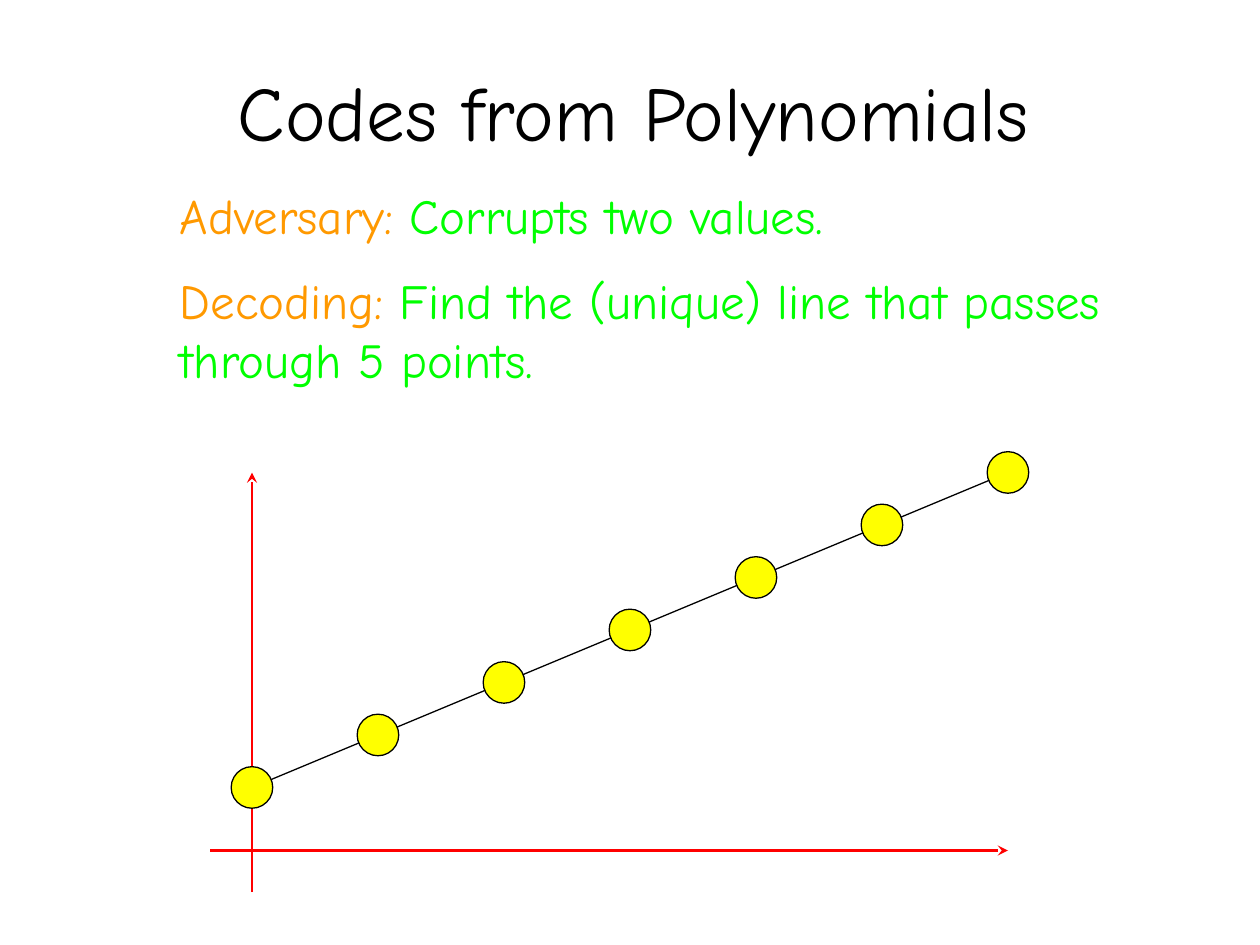
"""Build the slide on codes from polynomials."""
from dataclasses import dataclass

from lxml import etree
from pptx import Presentation
from pptx.dml.color import RGBColor
from pptx.enum.shapes import MSO_CONNECTOR, MSO_SHAPE
from pptx.enum.text import MSO_ANCHOR, MSO_AUTO_SIZE, PP_ALIGN
from pptx.oxml.ns import qn
from pptx.slide import Slide
from pptx.text.text import TextFrame, _Paragraph
from pptx.util import Inches, Pt

STRAIGHT = MSO_CONNECTOR.STRAIGHT
OVAL = MSO_SHAPE.OVAL
MIDDLE = MSO_ANCHOR.MIDDLE
GROW = MSO_AUTO_SIZE.SHAPE_TO_FIT_TEXT
CENTER = PP_ALIGN.CENTER

FONT = "Comic Neue"
BLACK, RED, YELLOW = "000000", "FF0000", "FFFF00"
ORANGE, GREEN = "FF9900", "00FF00"

DOT_SIZE = 0.33
DOT_COUNT = 7
LEFT, RIGHT = 2, 8
LOW, HIGH = 6.25, 3.75


@dataclass
class Line:
    x1: float
    y1: float
    x2: float
    y2: float
    color: str
    width: float
    arrow: bool


@dataclass
class Statement:
    label: str
    body: str


LINES = [
    Line(LEFT, LOW, RIGHT, HIGH, BLACK, 0.75, False),
    Line(LEFT, 7.08, LEFT, HIGH, RED, 1.5, True),
    Line(1.67, 6.75, RIGHT, 6.75, RED, 1.5, True),
]
STATEMENTS = [
    Statement("Adversary: ", "Corrupts two values."),
    Statement("Decoding: ", "Find the (unique) line that passes through 5 points."),
]


def rgb(color: str) -> RGBColor:
    return RGBColor.from_string(color)


def add_line(s: Slide, line: Line) -> None:
    cxn = s.shapes.add_connector(
        STRAIGHT, Inches(line.x1), Inches(line.y1), Inches(line.x2), Inches(line.y2)
    )
    cxn.line.color.rgb = rgb(line.color)
    cxn.line.width = Pt(line.width)
    sp_pr = cxn._element.spPr
    if line.arrow:
        etree.SubElement(sp_pr.find(qn("a:ln")), qn("a:tailEnd"), type="stealth")
    etree.SubElement(sp_pr, qn("a:effectLst"))


def add_dot(s: Slide, x: float, y: float) -> None:
    sp = s.shapes.add_shape(
        OVAL,
        Inches(x - DOT_SIZE / 2),
        Inches(y - DOT_SIZE / 2),
        Inches(DOT_SIZE),
        Inches(DOT_SIZE),
    )
    sp.shadow.inherit = False
    sp.fill.solid()
    sp.fill.fore_color.rgb = rgb(YELLOW)
    sp.line.color.rgb = rgb(BLACK)
    sp.line.width = Pt(0.75)


def add_text_box(s: Slide, x: float, y: float, w: float, h: float) -> TextFrame:
    tf = s.shapes.add_textbox(Inches(x), Inches(y), Inches(w), Inches(h)).text_frame
    tf.word_wrap = True
    return tf


def add_run(p: _Paragraph, text: str, size: float, color: str) -> None:
    r = p.add_run()
    r.text = text
    r.font.name = FONT
    r.font.size = Pt(size)
    r.font.color.rgb = rgb(color)


def add_title(s: Slide) -> None:
    tf = add_text_box(s, 0.53, 0.25, 9, 1.25)
    tf.vertical_anchor = MIDDLE
    p = tf.paragraphs[0]
    p.alignment = CENTER
    add_run(p, "Codes from Polynomials", 44, BLACK)


def add_statements(s: Slide) -> None:
    tf = add_text_box(s, 1.33, 1.42, 8.08, 2)
    tf.auto_size = GROW
    for i, statement in enumerate(STATEMENTS):
        p = tf.add_paragraph() if i else tf.paragraphs[0]
        p.space_after = Pt(15)
        add_run(p, statement.label, 28, ORANGE)
        add_run(p, statement.body, 28, GREEN)


def main() -> None:
    prs = Presentation()
    prs.slide_width, prs.slide_height = Inches(10), Inches(7.5)
    s = prs.slides.add_slide(prs.slide_layouts[6])
    add_title(s)
    for line in LINES:
        add_line(s, line)
    for i in range(DOT_COUNT):
        t = i / (DOT_COUNT - 1)
        add_dot(s, LEFT + t * (RIGHT - LEFT), LOW + t * (HIGH - LOW))
    add_statements(s)
    prs.save("out.pptx")


if __name__ == "__main__":
    main()
